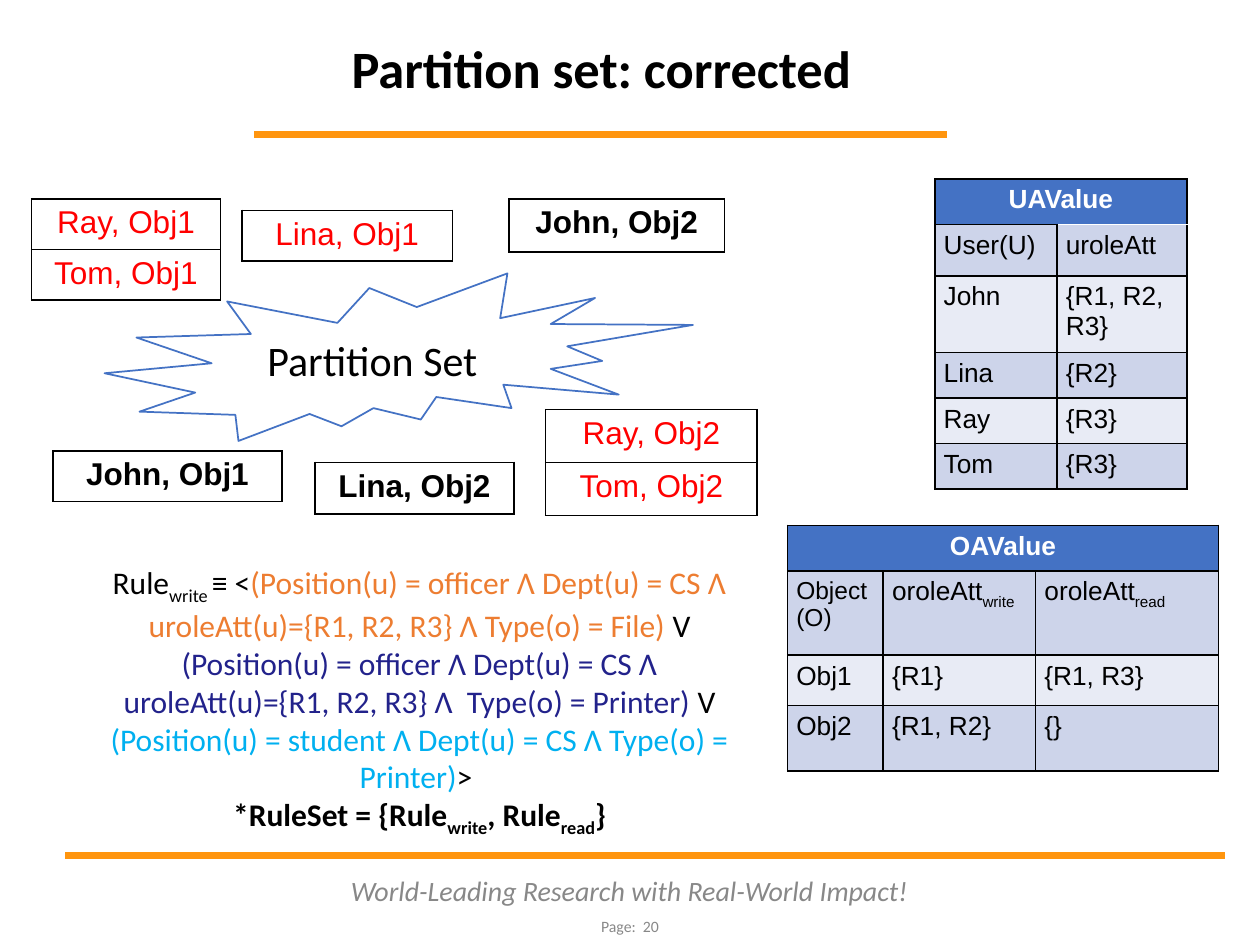
import pptx
import pptx.util
import pptx.dml.color
import pptx.enum.shapes
import pptx.enum.text
import pptx.oxml
import pptx.oxml.ns
from pptx.util import Inches, Pt

# Content
BLACK, RED, WHITE, GREY = "000000", "FF0000", "FFFFFF", "888888"
BLUE, BAND, LIGHT, ORANGE = "4472C4", "CDD4EA", "E8EBF5", "FF950E"
CENTER = pptx.enum.text.PP_ALIGN.CENTER
MIDDLE = pptx.enum.text.MSO_ANCHOR.MIDDLE

TITLE = "Partition set: corrected"
RULES = [(2.02, 1.07, 5.5), (0.52, 6.79, 9.2)]  # left, top, length
FOOTERS = [
    ("World-Leading Research with Real-World Impact!", (2.58, 6.89, 4.83, 0.36),
     {"size": Pt(16), "italic": True}),
    ("Page:  20", (4.06, 7.17, 1.88, 0.36), {"size": Pt(9)}),
]

# Partition members: left, top, width, row height, entries, in red
PARTITIONS = [
    (0.25, 1.58, 1.5, 0.4, ["Ray, Obj1", "Tom, Obj1"], True),
    (1.92, 1.67, 1.67, 0.4, ["Lina, Obj1"], True),
    (4.04, 1.58, 1.71, 0.42, ["John, Obj2"], False),
    (0.42, 3.58, 1.82, 0.4, ["John, Obj1"], False),
    (2.5, 3.67, 1.58, 0.41, ["Lina, Obj2"], False),
    (4.33, 3.25, 1.68, 0.42, ["Ray, Obj2", "Tom, Obj2"], True),
]

# Attribute tables: left, top, column widths, row heights, heading, rows
SUB = {"sub": True}
ATTRIBUTES = [
    (7.42, 1.42, [0.97, 1.03], [0.36, 0.41, 0.61, 0.36, 0.36, 0.36], "UAValue",
     [["User(U)", "uroleAtt"], ["John", "{R1, R2, R3}"], ["Lina", "{R2}"],
      ["Ray", "{R3}"], ["Tom", "{R3}"]]),
    (6.25, 4.17, [0.76, 1.21, 1.45], [0.36, 0.67, 0.4, 0.52], "OAValue",
     [["Object\n(O)", [("oroleAtt", {}), ("write", SUB)],
       [("oroleAtt", {}), ("read", SUB)]],
      ["Obj1", "{R1}", "{R1, R3}"], ["Obj2", "{R1, R2}", "{}"]]),
]

BOLD, BOLD_SUB = {"bold": True}, {"bold": True, "sub": True}
POLICY = [
    [("Rule", {}), ("write ", SUB), ("≡ <", {}),
     ("(Position(u) = officer Λ Dept(u) = CS Λ uroleAtt(u)={R1, R2, R3} Λ Type(o) = File)",
      {"color": "ED7D31"}),
     (" V ", {}),
     ("(Position(u) = officer Λ Dept(u) = CS Λ uroleAtt(u)={R1, R2, R3} Λ  Type(o) = Printer) ",
      {"color": "22228B"}),
     ("V ", {}),
     ("(Position(u) = student Λ Dept(u) = CS Λ Type(o) = Printer)", {"color": "00B0F0"}),
     ("> ", {})],
    [("*RuleSet = {Rule", BOLD), ("write", BOLD_SUB), (", Rule", BOLD),
     ("read", BOLD_SUB), ("}", BOLD)],
]


# Helpers
def rgb(value):
    return pptx.dml.color.RGBColor.from_string(value)


def box(*inches):
    return [Inches(v) for v in inches]


def write(p, runs, align=None, **base):
    """Fill a paragraph from a string or from (text, format) runs."""
    p.alignment = align
    for text, extra in [(runs, {})] if isinstance(runs, str) else runs:
        fmt = {"name": "Calibri", "color": BLACK, "bold": False, **base, **extra}
        r = p.add_run()
        r.text = text
        r.font.color.rgb = rgb(fmt.pop("color"))
        if fmt.pop("sub", False):
            r._r.get_or_add_rPr().set("baseline", "-25000")
        for key, value in fmt.items():
            setattr(r.font, key, value)


def border(cell, sides="LRTB", color=BLACK):
    tcPr = cell._tc.get_or_add_tcPr()
    for side in sides:
        for old in tcPr.findall(pptx.oxml.ns.qn(f"a:ln{side}")):
            tcPr.remove(old)
        tcPr.insert("LRTB".index(side), pptx.oxml.parse_xml(
            f'<a:ln{side} {pptx.oxml.ns.nsdecls("a")} w="12192"><a:solidFill>'
            f'<a:srgbClr val="{color}"/></a:solidFill></a:ln{side}>'))


def add_grid(left, top, widths, heights):
    """Add a bordered, unfilled table."""
    tbl = s.shapes.add_table(len(heights), len(widths),
                             *box(left, top, sum(widths), sum(heights))).table
    tbl.first_row = tbl.horz_banding = False
    for col, w in zip(tbl.columns, widths):
        col.width = Inches(w)
    for row, h in zip(tbl.rows, heights):
        row.height = Inches(h)
    for cell in tbl.iter_cells():
        cell.margin_left = cell.margin_right = Inches(0.07)
        cell.margin_top = cell.margin_bottom = Inches(0.05)
        border(cell)
        cell.fill.background()
    return tbl


def paint(fill, color):
    fill.solid()
    fill.fore_color.rgb = rgb(color)


prs = pptx.Presentation()
prs.slide_width, prs.slide_height = box(10, 7.5)
s = prs.slides.add_slide(prs.slide_layouts[1])

# Title
title, body = s.placeholders[0], s.placeholders[1]
title.left, title.top, title.width, title.height = box(2.08, 0.33, 5.39, 0.51)
tf = title.text_frame
tf.vertical_anchor = pptx.enum.text.MSO_ANCHOR.BOTTOM
tf.paragraphs[0].line_spacing = 0.9
write(tf.paragraphs[0], TITLE, CENTER, size=Pt(30), bold=True)

# Policy rule
body.left, body.top, body.width, body.height = box(0.58, 4.42, 5.5, 2.25)
tf = body.text_frame
for i, runs in enumerate(POLICY):
    p = tf.add_paragraph() if i else tf.paragraphs[0]
    pPr = p._p.get_or_add_pPr()
    pPr.set("marL", "0")
    pPr.set("indent", "0")
    pPr.append(pptx.oxml.parse_xml(f'<a:buNone {pptx.oxml.ns.nsdecls("a")}/>'))
    p.space_before = Pt(0)
    write(p, runs, CENTER, size=Pt(18))

# Orange rules and footer
for left, top, length in RULES:
    line = s.shapes.add_connector(pptx.enum.shapes.MSO_CONNECTOR.STRAIGHT,
                                  *box(left, top, left + length, top))
    line.line.color.rgb = rgb(ORANGE)
    line.line.width = Pt(4)
    line._element.spPr.append(
        pptx.oxml.parse_xml(f'<a:effectLst {pptx.oxml.ns.nsdecls("a")}/>'))
for text, place, fmt in FOOTERS:
    tf = s.shapes.add_textbox(*box(*place)).text_frame
    tf.word_wrap = True
    tf.vertical_anchor = MIDDLE
    write(tf.paragraphs[0], text, CENTER, color=GREY, **fmt)

# Burst
sp = s.shapes.add_shape(pptx.enum.shapes.MSO_SHAPE.EXPLOSION2, *box(0.83, 2.17, 4.67, 1.33))
sp.shadow.inherit = False
paint(sp.fill, WHITE)
sp.line.color.rgb = rgb(BLUE)
sp.line.width = Pt(1)
sp.text_frame.vertical_anchor = MIDDLE
write(sp.text_frame.paragraphs[0], "Partition Set ", CENTER, size=Pt(24))

# Partition members
for left, top, width, height, entries, is_red in PARTITIONS:
    tbl = add_grid(left, top, [width], [height] * len(entries))
    for i, entry in enumerate(entries):
        write(tbl.cell(i, 0).text_frame.paragraphs[0], entry, CENTER, name="Arial",
              size=Pt(18), color=RED if is_red else BLACK, bold=not is_red)

# Attribute tables
for left, top, widths, heights, heading, rows in ATTRIBUTES:
    tbl = add_grid(left, top, widths, heights)
    head = tbl.cell(0, 0)
    head.merge(tbl.cell(0, len(widths) - 1))
    paint(head.fill, BLUE)
    write(head.text_frame.paragraphs[0], heading, CENTER, name="Arial",
          size=Pt(15), color=WHITE, bold=True)
    for i, row in enumerate(rows, 1):
        for j, value in enumerate(row):
            cell = tbl.cell(i, j)
            paint(cell.fill, BAND if i % 2 else LIGHT)
            tf = cell.text_frame
            lines = value.split("\n") if isinstance(value, str) else [value]
            for k, text in enumerate(lines):
                p = tf.add_paragraph() if k else tf.paragraphs[0]
                write(p, text, name="Arial", size=Pt(14 if len(lines) > 1 else 15))
    if heading == "UAValue":  # white edge above the role column
        border(tbl.cell(0, 1), "B", WHITE)
        border(tbl.cell(1, 1), "T", WHITE)

prs.save("out.pptx")
